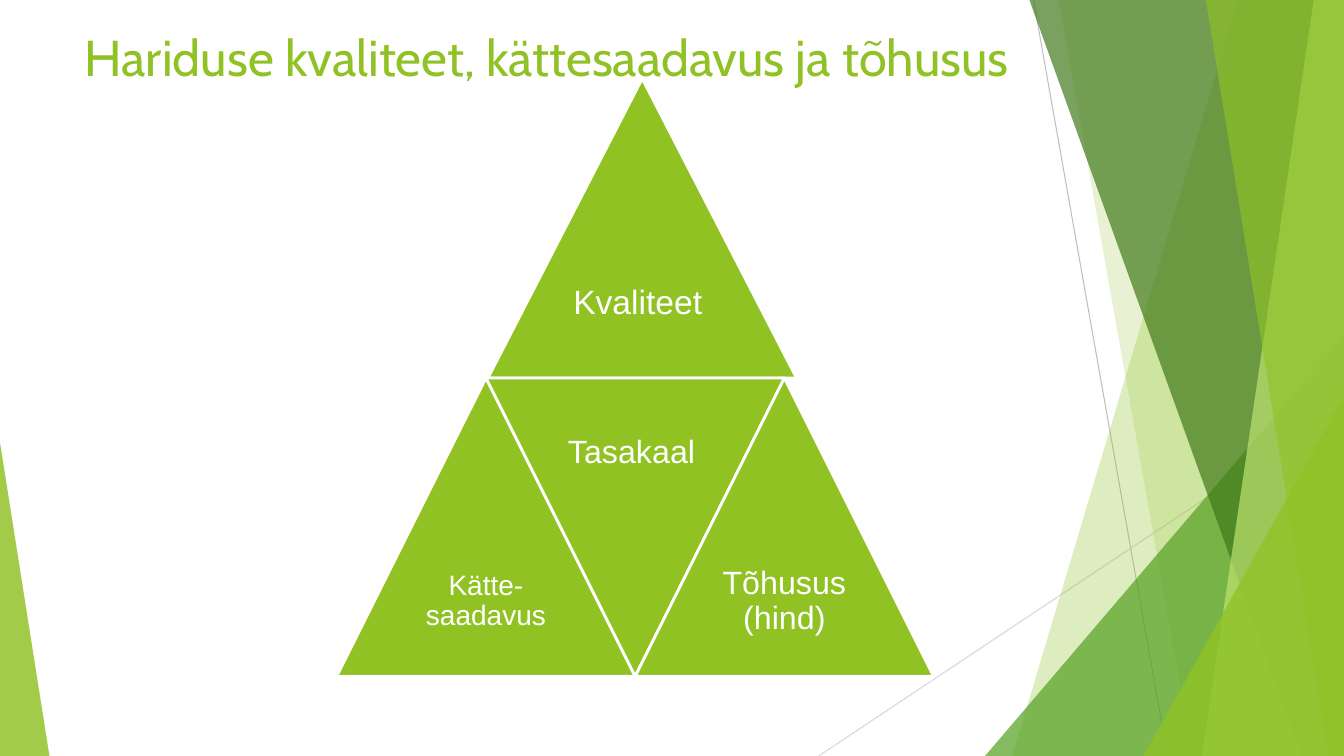
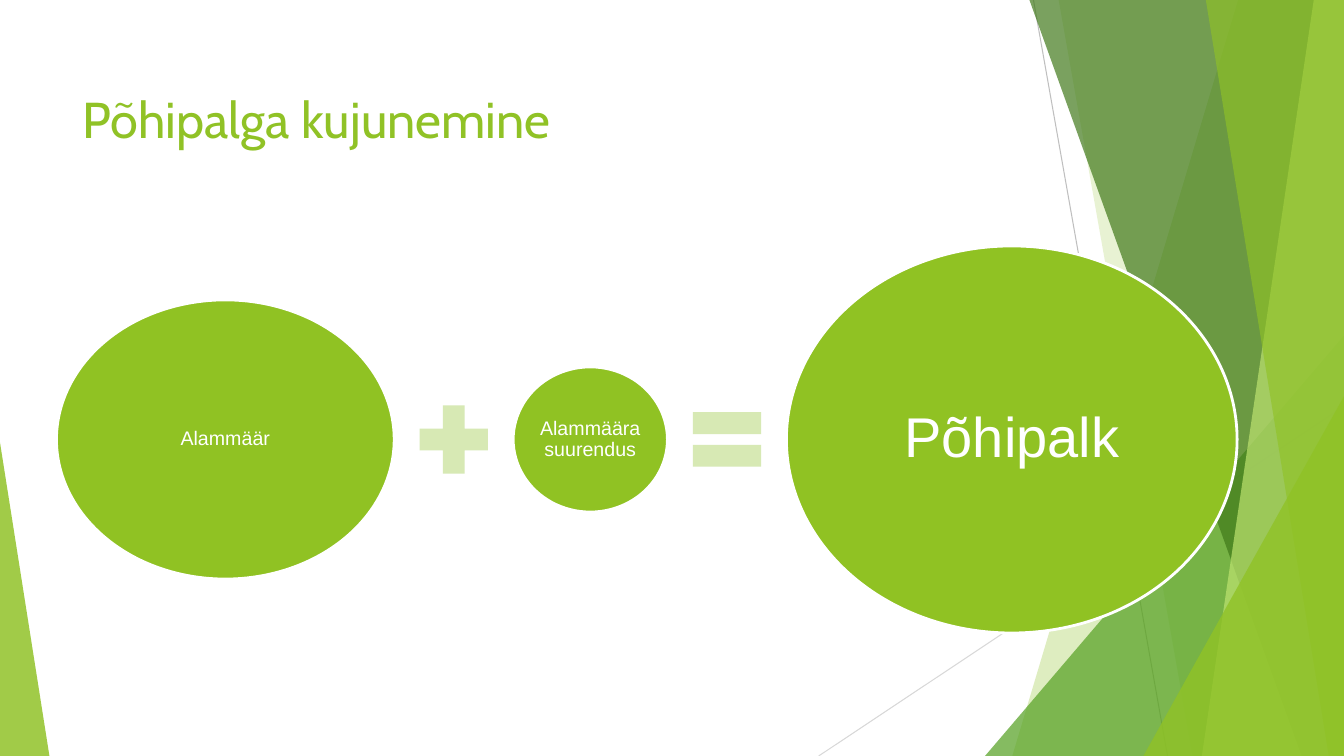
from lxml import etree
from pptx import Presentation
from pptx.dml.color import RGBColor
from pptx.enum import shapes, text
from pptx.oxml import ns
from pptx.util import Inches, Pt

COLORS = {
    "title": "90C226", "lime": "90C226", "leaf": "54A021", "forest": "3F7818",
    "pale": "BFE471", "figure": "90C223", "operator": "D7E9B4", "white": "FFFFFF",
    "line_dark": "BFBFBF", "line_light": "D8D8D8",
}
WIDTH, HEIGHT = 13.33, 7.5
SHAPE = shapes.MSO_SHAPE


def rgb(name):
    return RGBColor.from_string(COLORS[name])


def inches(*values):
    return [Inches(value) for value in values]


# Shared drawing helpers
def paint(shape, color, opacity=None, outlined=False):
    shape.shadow.inherit = False
    shape.fill.solid()
    shape.fill.fore_color.rgb = rgb(color)
    if opacity is not None:
        srgb = shape.element.spPr.find(".//" + ns.qn("a:srgbClr"))
        etree.SubElement(srgb, ns.qn("a:alpha"), val=str(opacity * 1000))
    if outlined:
        shape.line.color.rgb = rgb("white")
        shape.line.width = Pt(2)
    else:
        shape.line.fill.background()


def add_figure(slide, kind, box, color="figure", opacity=None, outlined=False):
    figure = slide.shapes.add_shape(kind, *inches(*box))
    paint(figure, color, opacity, outlined)
    return figure


def write_label(shape, wording, size, inset, space_after=0):
    frame = shape.text_frame
    frame.text = wording
    frame.word_wrap = True
    frame.vertical_anchor = text.MSO_ANCHOR.MIDDLE
    frame.margin_left = frame.margin_right = Inches(inset)
    frame.margin_top = frame.margin_bottom = Inches(inset)
    paragraph = frame.paragraphs[0]
    paragraph.alignment = text.PP_ALIGN.CENTER
    paragraph.line_spacing = 0.9
    paragraph.space_after = Pt(space_after)
    font = paragraph.runs[0].font
    font.name, font.size = "Arial", Pt(size)
    font.color.rgb = rgb("white")


def write_title(slide, wording, box):
    title = slide.shapes.title
    title.left, title.top, title.width, title.height = inches(*box)
    frame = title.text_frame
    frame.text = wording
    frame.word_wrap = True
    frame.auto_size = text.MSO_AUTO_SIZE.NONE
    frame.vertical_anchor = text.MSO_ANCHOR.TOP
    paragraph = frame.paragraphs[0]
    paragraph.alignment = text.PP_ALIGN.LEFT
    font = paragraph.runs[0].font
    font.name, font.size = "Cabin", Pt(36)
    font.color.rgb = rgb("title")


# Backdrop of lines and overlapping facets
def add_thin_line(slide, start, end, color):
    line = slide.shapes.add_connector(
        shapes.MSO_CONNECTOR.STRAIGHT, *inches(*start, *end))
    line.line.color.rgb = rgb(color)
    line.line.width = Pt(0.75)
    etree.SubElement(line.element.spPr, ns.qn("a:effectLst"))


def add_band(slide, top_x, bottom_x, color, opacity):
    """Facet from a slanted left edge to the right edge of the slide."""
    builder = slide.shapes.build_freeform(*inches(top_x, 0), scale=1.0)
    corners = [(WIDTH, 0), (WIDTH, HEIGHT), (bottom_x, HEIGHT)]
    builder.add_line_segments([inches(*corner) for corner in corners], close=True)
    paint(builder.convert_to_shape(), color, opacity)


def add_corner(slide, left, top, width, apex, color, opacity):
    """Right-angled triangle standing on the bottom edge."""
    box = (left, top, width, HEIGHT - top)
    corner = add_figure(slide, SHAPE.ISOSCELES_TRIANGLE, box, color, opacity)
    corner.adjustments[0] = apex


def draw_backdrop(slide):
    add_thin_line(slide, (10.25, 0), (11.58, HEIGHT), "line_dark")
    add_thin_line(slide, (WIDTH, 4.03), (8.12, HEIGHT), "line_light")
    add_band(slide, 12.28, 10.04, "lime", 29)
    add_band(slide, 10.5, 11.83, "lime", 20)
    add_corner(slide, 9.77, 3.33, 3.56, 1, "leaf", 71)
    add_band(slide, 10.21, 12.91, "forest", 69)
    add_band(slide, 13.03, 11.92, "pale", 69)
    add_band(slide, 11.96, 13.18, "lime", 64)
    add_corner(slide, 11.34, 3.93, 1.99, 1, "lime", 80)
    add_corner(slide, 0, 4.39, 0.49, 0, "lime", 84)


def share_backdrop(slide, layout):
    """Draw the backdrop, then move it to the layout that all slides use."""
    draw_backdrop(slide)
    facets = [s.element for s in slide.shapes if not s.is_placeholder]
    for number, facet in enumerate(facets):
        facet.find(".//" + ns.qn("p:cNvPr")).set("id", str(100 + number))
        layout.shapes.element.insert(2 + number, facet)


# Slide 1: triangle made of four triangles
def add_triangle(slide, box, wording, size, label_box, inset=0.1, rotation=0):
    triangle = add_figure(slide, SHAPE.ISOSCELES_TRIANGLE, box, outlined=True)
    triangle.rotation = rotation
    label = slide.shapes.add_textbox(*inches(*label_box))
    write_label(label, wording, size, inset)


def draw_pyramid(slide, left, top, side):
    half, quarter = side / 2, side / 4
    low = top + side
    add_triangle(slide, (left + 1.5, top - 0.01, 3.06, 2.97), "Kvaliteet", 24,
                 (left + 1.99, top + half, 1.99, half))
    add_triangle(slide, (left, low, side, side), "Kätte-saadavus", 20,
                 (left + quarter, low + half, half, half), inset=0.08)
    add_triangle(slide, (left + half, low, side, side), "Tasakaal", 23,
                 (left + 1.72, low, 2.41, half), rotation=180)
    add_triangle(slide, (left + side, low, side, side), "Tõhusus (hind)", 23,
                 (left + side + quarter, low + half, half, half))


def build_quality_slide(slide):
    write_title(slide, "Hariduse kvaliteet, kättesaadavus ja tõhusus",
                (0.74, 0.21, 11.69, 1.42))
    draw_pyramid(slide, 3.34, 0.79, 2.96)


# Slide 2: sum of ellipses
def draw_equation(slide, left, middle, gap):
    # kind, width, height, wording, text size, inset, space after
    terms = [
        (SHAPE.OVAL, 3.35, 2.77, "Alammäär", 14, 0.02, 4.9),
        (SHAPE.MATH_PLUS, 0.92, 0.92, None, 0, 0, 0),
        (SHAPE.OVAL, 1.53, 1.44, "Alammäära suurendus", 14, 0.02, 4.9),
        (SHAPE.MATH_EQUAL, 0.92, 0.92, None, 0, 0, 0),
        (SHAPE.OVAL, 4.47, 3.84, "Põhipalk", 40, 0.06, 14),
    ]
    for kind, width, height, wording, *style in terms:
        box = (left, middle - height / 2, width, height)
        if wording:
            write_label(add_figure(slide, kind, box, outlined=True), wording, *style)
        else:
            add_figure(slide, kind, box, "operator")
        left += width + gap


def build_salary_slide(slide):
    write_title(slide, "Põhipalga kujunemine", (0.72, 0.82, 9.4, 1.44))
    draw_equation(slide, 0.56, 4.36, 0.13)


def main():
    deck = Presentation()
    deck.slide_width, deck.slide_height = inches(WIDTH, HEIGHT)
    layout = deck.slide_layouts[5]
    quality, salary = [deck.slides.add_slide(layout) for _ in range(2)]
    share_backdrop(quality, layout)
    build_quality_slide(quality)
    build_salary_slide(salary)
    deck.save("out.pptx")


if __name__ == "__main__":
    main()
